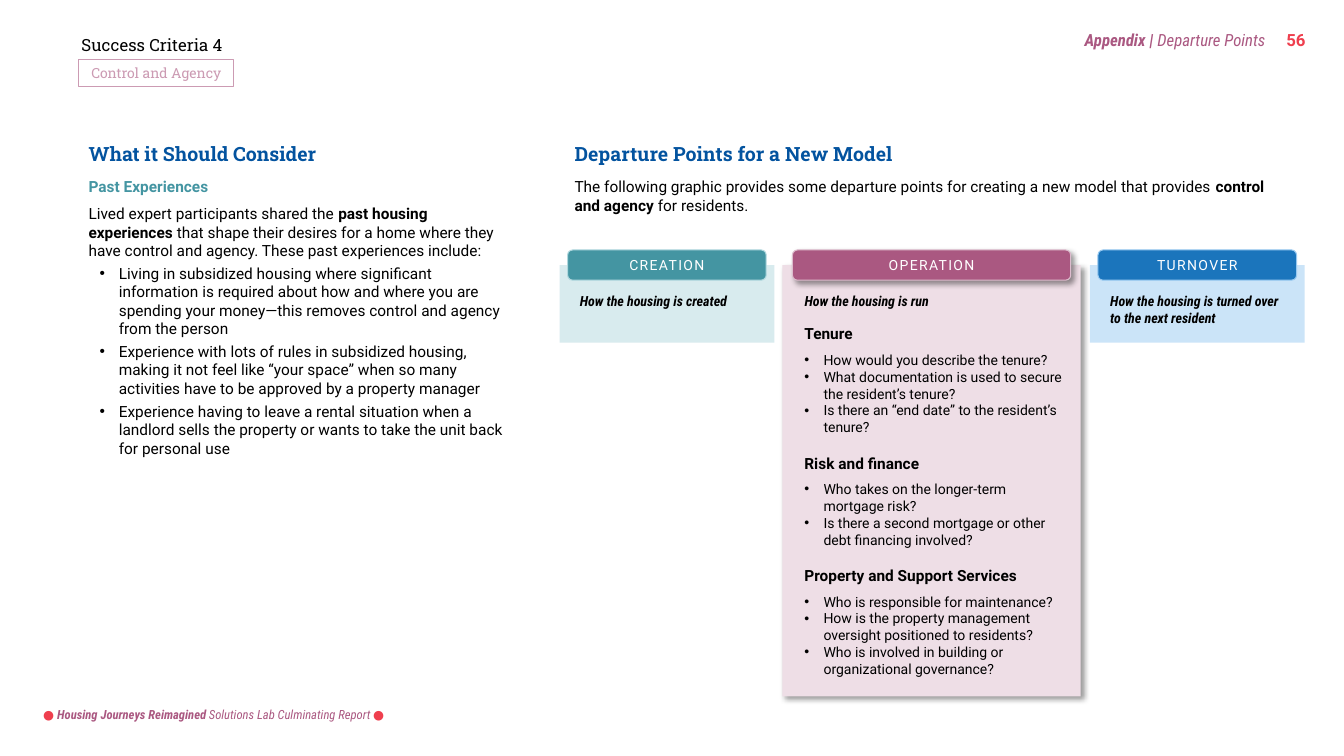
from pptx import Presentation
from pptx.dml.color import RGBColor
from pptx.enum import shapes, text
from pptx.oxml import parse_xml
from pptx.oxml.ns import nsdecls
from pptx.util import Inches, Pt

BLACK, WHITE = RGBColor(0, 0, 0), RGBColor(255, 255, 255)
NAVY = RGBColor(0x03, 0x53, 0x9F)
RED = RGBColor(0xEF, 0x3F, 0x4E)
TEAL, TEAL_LINE, TEAL_PALE = (RGBColor.from_string(c) for c in ("4495A2", "B0D8DE", "D8EBEE"))
PLUM, PLUM_LINE, PLUM_PALE = (RGBColor.from_string(c) for c in ("AA5881", "DDBCCD", "EEDEE6"))
BLUE, BLUE_LINE, BLUE_PALE = (RGBColor.from_string(c) for c in ("1B75BC", "98C9F0", "CBE4F8"))
PINK = RGBColor(0xCC, 0x9B, 0xB3)

RECT = shapes.MSO_SHAPE.RECTANGLE
ROUND = shapes.MSO_SHAPE.ROUNDED_RECTANGLE
TOP, MIDDLE = text.MSO_ANCHOR.TOP, text.MSO_ANCHOR.MIDDLE
CENTER, RIGHT = text.PP_ALIGN.CENTER, text.PP_ALIGN.RIGHT


def fmt(font, size, color=BLACK, **more):
    """Return the format values of a run."""
    return dict(name=font, size=Pt(size), color=color, **more)


BODY, BOLD = fmt("Roboto", 11), fmt("Roboto", 11, bold=True)
SMALL = fmt("Roboto", 10)
TITLE = fmt("Roboto Slab", 14, NAVY, bold=True)
NOTE = fmt("Roboto Condensed", 10, bold=True, italic=True)
TAB = fmt("Roboto", 10, WHITE, spacing=100)


def para(*runs, indent=None, **values):
    """Return a paragraph: its runs, bullet indent and format values."""
    return runs, indent, values


def add_bullet(p, indent):
    """Give a paragraph a hanging round bullet."""
    pPr = p._p.get_or_add_pPr()
    pPr.set("marL", str(Inches(indent)))
    pPr.set("indent", str(Inches(-0.19)))
    pPr.append(parse_xml(f'<a:buFont {nsdecls("a")} typeface="Arial"/>'))
    pPr.append(parse_xml(f'<a:buChar {nsdecls("a")} char="•"/>'))


def write(sp, paras, anchor=TOP, wrap=True):
    """Write formatted paragraphs into a shape."""
    tf = sp.text_frame
    tf.word_wrap, tf.vertical_anchor = wrap, anchor
    for i, (runs, indent, values) in enumerate(paras):
        p = tf.paragraphs[0] if i == 0 else tf.add_paragraph()
        for key, value in {"alignment": text.PP_ALIGN.LEFT, **values}.items():
            setattr(p, key, value)
        if indent is not None:
            add_bullet(p, indent)
        for words, values in runs:
            r = p.add_run()
            r.text = words
            for key, value in values.items():
                if key == "color":
                    r.font.color.rgb = value
                elif key == "spacing":
                    r._r.get_or_add_rPr().set("spc", str(value))
                else:
                    setattr(r.font, key, value)


def add_text(s, box, *paras, **frame):
    """Add a text box."""
    write(s.shapes.add_textbox(*map(Inches, box)), paras, **frame)


def add_box(s, kind, box, fill=None, line=None, shadow=False):
    """Add a preset shape with optional fill, outline and shadow."""
    sp = s.shapes.add_shape(kind, *map(Inches, box))
    sp.shadow.inherit = False
    if fill is None:
        sp.fill.background()
    else:
        sp.fill.solid()
        sp.fill.fore_color.rgb = fill
    if line is None:
        sp.line.fill.background()
    else:
        sp.line.color.rgb, sp.line.width = line, Pt(0.75)
    if shadow:
        effects = sp._element.spPr.find("{http://schemas.openxmlformats.org/drawingml/2006/main}effectLst")
        effects.append(parse_xml(
            f'<a:outerShdw {nsdecls("a")} blurRad="{Pt(4)}" dist="{Pt(3)}" dir="2700000" algn="tl" '
            'rotWithShape="0"><a:srgbClr val="000000"><a:alpha val="40000"/></a:srgbClr></a:outerShdw>'))
    return sp


def header(s, left, top, width):
    """Place the criteria label, its tag, the section name and the page number."""
    add_text(s, (left - 0.07, top + 0.04, 1.62, 0.3),
             para(("Success Criteria 4", fmt("Roboto Slab", 12))), anchor=MIDDLE)
    tag = add_box(s, RECT, (left, top + 0.34, 1.54, 0.27), line=PINK)
    write(tag, [para(("Control and Agency", fmt("Roboto Slab", 10, PINK)), alignment=CENTER)], anchor=MIDDLE)
    right = left + width
    section = fmt("Roboto Condensed", 12, PLUM, italic=True)
    add_text(s, (right - 3.98, top, 3.5, 0.3),
             para(("Appendix | ", {**section, "bold": True}), ("Departure Points", section), alignment=RIGHT),
             anchor=MIDDLE)
    add_text(s, (right - 0.47, top, 0.47, 0.3),
             para(("56", fmt("Roboto", 12, RED, bold=True))), anchor=MIDDLE)


def considerations(s, left, top, width):
    """Place the left column of past experiences."""
    add_text(s, (left, top, 2.46, 0.34), para(("What it Should Consider", TITLE)), wrap=False)
    points = (
        "Living in subsidized housing where significant information is required about how and where "
        "you are spending your money—this removes control and agency from the person",
        "Experience with lots of rules in subsidized housing, making it not feel like “your space” "
        "when so many activities have to be approved by a property manager",
        "Experience having to leave a rental situation when a landlord sells the property or wants "
        "to take the unit back for personal use")
    add_text(s, (left, top + 0.35, width, 2.9),
             para(("Past Experiences", {**BOLD, "color": TEAL}), space_after=Pt(6)),
             para(("Lived expert participants shared the ", BODY), ("past housing experiences", BOLD),
                  (" that shape their desires for a home where they have control and agency. "
                   "These past experiences include:", BODY)),
             *(para((point, BODY), indent=0.3, space_before=Pt(3)) for point in points))


def introduction(s, left, top, width):
    """Place the title and lead-in of the right column."""
    add_text(s, (left, top, 3.42, 0.34), para(("Departure Points for a New Model", TITLE)), wrap=False)
    add_text(s, (left, top + 0.35, width, 0.47),
             para(("The following graphic provides some departure points for creating a new model "
                   "that provides ", BODY), ("control and agency ", BOLD), ("for residents.", BODY)))


def stage(s, box, name, note, colors, inset=0.08, shadow=False):
    """Place a panel with its tab and its note."""
    left, top, width, height = box
    fill, line, pale = colors
    add_box(s, RECT, box, pale, shadow=shadow)
    left, width = left + inset, width - 2 * inset
    tab = add_box(s, ROUND, (left, top - 0.15, width, 0.3), fill, line, shadow)
    write(tab, [para((name, TAB), alignment=CENTER)], anchor=MIDDLE)
    write(add_box(s, ROUND, (left, top + 0.2, width, 0.48)), [para((note, NOTE))])


def questions(s, left, top, width):
    """Place the groups of questions of the operation stage."""
    groups = {
        "Tenure": ("How would you describe the tenure?",
                   "What documentation is used to secure the resident’s tenure?",
                   "Is there an “end date” to the resident’s tenure?"),
        "Risk and finance": ("Who takes on the longer-term mortgage risk?",
                             "Is there a second mortgage or other debt financing involved?"),
        "Property and Support Services": ("Who is responsible for maintenance?",
                                          "How is the property management oversight positioned to residents?",
                                          "Who is involved in building or organizational governance?")}
    paras = []
    for heading, items in groups.items():
        paras.append(para((heading, BOLD), space_before=Pt(13 if paras else 0), space_after=Pt(6)))
        paras += [para((item, SMALL), indent=0.19) for item in items]
    add_text(s, (left, top, width, 3.64), *paras)


def footer(s, left, top):
    """Place the report name between two dots."""
    dot = fmt("Roboto Slab", 9, RED)
    report = fmt("Roboto Condensed", 9, PLUM, italic=True)
    add_text(s, (left, top, 3.61, 0.25),
             para(("● ", dot), ("Housing Journeys Reimagined ", {**report, "bold": True}),
                  ("Solutions Lab Culminating Report ", report), ("●", dot)), anchor=MIDDLE)


def main():
    """Build and save the slide."""
    prs = Presentation()
    prs.slide_width, prs.slide_height = Inches(13.33), Inches(7.5)
    s = prs.slides.add_slide(prs.slide_layouts[6])
    header(s, 0.78, 0.25, 12.35)
    considerations(s, 0.78, 1.36, 4.35)
    introduction(s, 5.6, 1.36, 7.26)
    stage(s, (7.76, 2.63, 2.96, 4.28), "OPERATION", "How the housing is run",
          (PLUM, PLUM_LINE, PLUM_PALE), inset=0.1, shadow=True)
    questions(s, 7.88, 3.17, 2.76)
    stage(s, (5.55, 2.63, 2.13, 0.77), "CREATION", "How the housing is created",
          (TEAL, TEAL_LINE, TEAL_PALE))
    stage(s, (10.81, 2.63, 2.13, 0.77), "TURNOVER", "How the housing is turned over to the next resident",
          (BLUE, BLUE_LINE, BLUE_PALE))
    footer(s, 0.33, 6.96)
    prs.save("out.pptx")


if __name__ == "__main__":
    main()
